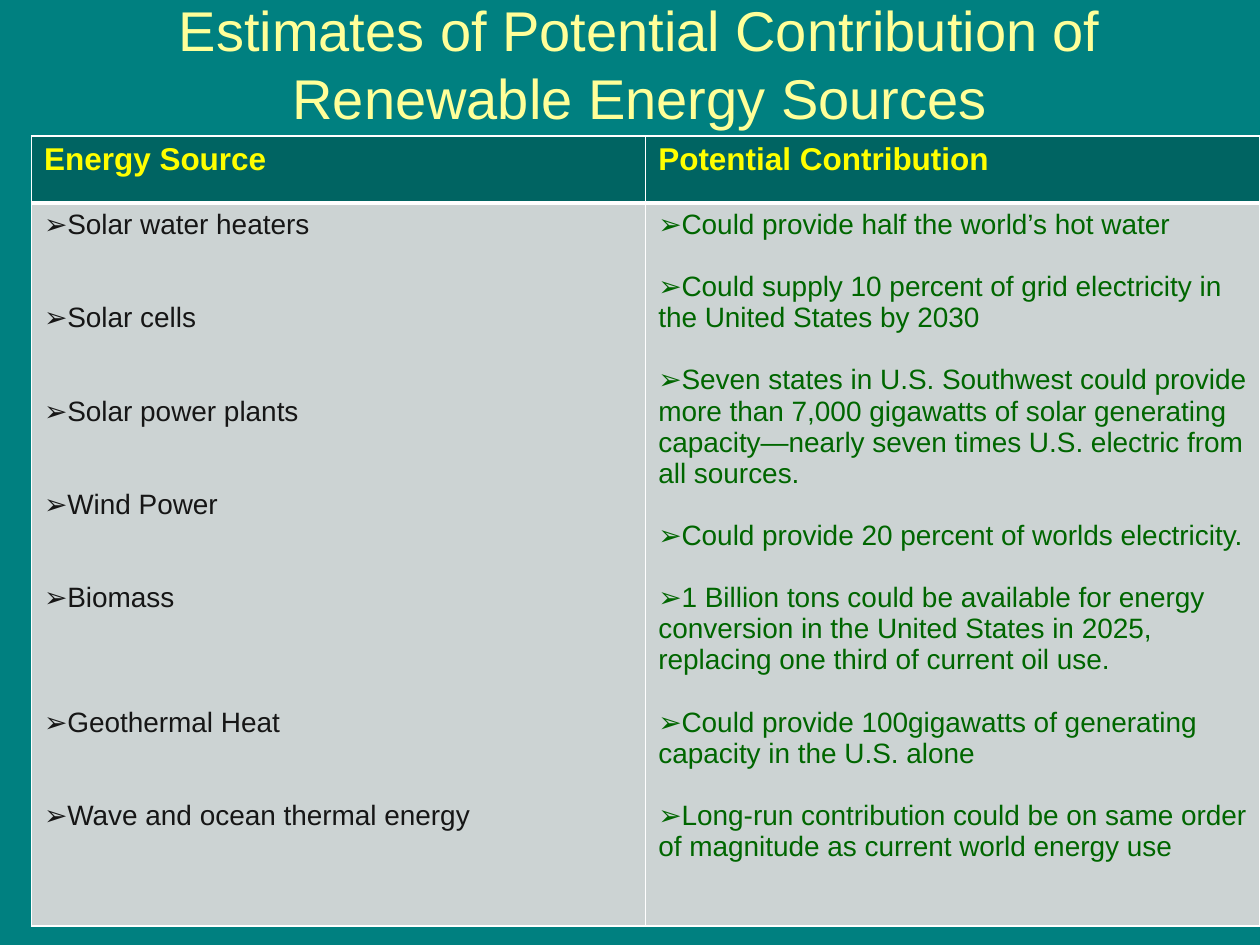
import dataclasses

import pptx
import pptx.dml.color
import pptx.enum.text
import pptx.oxml.ns
import pptx.util
from lxml import etree

Inches = pptx.util.Inches
Pt = pptx.util.Pt


@dataclasses.dataclass(frozen=True)
class Theme:
    font: str = "Arial"
    background: str = "008080"
    title: str = "FFFF99"
    header_fill: str = "006462"
    header_text: str = "FFFF00"
    body_fill: str = "CCD3D3"
    source_text: str = "161616"
    contribution_text: str = "006600"
    border: str = "FFFFFF"
    title_size: float = 32
    title_line: float = 38.8
    header_size: float = 18
    body_size: float = 16
    body_line: float = 17.8


THEME = Theme()
TITLE = "Estimates of Potential Contribution of Renewable Energy Sources"
HEADERS = ("Energy Source", "Potential Contribution")

# Each entry: text and the number of lines left free above it.
SOURCES = (
    ("Solar water heaters", 0),
    ("Solar cells", 2),
    ("Solar power plants", 2),
    ("Wind Power", 2),
    ("Biomass", 2),
    ("Geothermal Heat", 3),
    ("Wave and ocean thermal energy", 2),
)
CONTRIBUTIONS = (
    ("Could provide half the world’s hot water", 0),
    ("Could supply 10 percent of grid electricity in the United States by 2030", 1),
    ("Seven states in U.S. Southwest could provide more than 7,000 gigawatts of "
     "solar generating capacity—nearly seven times U.S. electric from all sources.", 1),
    ("Could provide 20 percent of worlds electricity.", 1),
    ("1 Billion tons could be available for energy conversion in the United States "
     "in 2025, replacing one third of current oil use.", 1),
    ("Could provide 100gigawatts of generating capacity in the U.S. alone", 1),
    ("Long-run contribution could be on same order of magnitude as current world "
     "energy use", 1),
)


def rgb(color):
    return pptx.dml.color.RGBColor.from_string(color)


def add_span(para, text, size, color, bold=False):
    span = para.add_run()
    span.text = text
    span.font.name = THEME.font
    span.font.size = Pt(size)
    span.font.bold = bold
    span.font.color.rgb = rgb(color)


def add_child(parent, tag, **attributes):
    return etree.SubElement(parent, pptx.oxml.ns.qn(tag), **attributes)


def set_bullet(para):
    """Put an arrow bullet directly before the text, with no hanging indent."""
    properties = para._p.get_or_add_pPr()
    properties.set("marL", "0")
    properties.set("indent", "0")
    add_child(properties, "a:buFont", typeface=THEME.font)
    add_child(properties, "a:buChar", char="➢")


def style_cell(cell, fill, top=1, bottom=1):
    """Fill the cell and draw its borders, widths in points."""
    properties = cell._tc.get_or_add_tcPr()
    for side, width in (("L", 1), ("R", 1), ("T", top), ("B", bottom)):
        line = add_child(properties, f"a:ln{side}", w=str(Pt(width)))
        solid = add_child(line, "a:solidFill")
        add_child(solid, "a:srgbClr", val=THEME.border)
    cell.fill.solid()
    cell.fill.fore_color.rgb = rgb(fill)


def fill_list(cell, entries, color):
    frame = cell.text_frame
    for index, (text, free_lines) in enumerate(entries):
        para = frame.paragraphs[0] if index == 0 else frame.add_paragraph()
        para.space_before = Pt(free_lines * THEME.body_line)
        set_bullet(para)
        add_span(para, text, THEME.body_size, color)


def place_title(page, left, top, width, height):
    box = page.shapes.title
    box.left, box.top, box.width, box.height = left, top, width, height
    frame = box.text_frame
    frame.word_wrap = True
    frame.auto_size = pptx.enum.text.MSO_AUTO_SIZE.NONE
    frame.vertical_anchor = pptx.enum.text.MSO_ANCHOR.MIDDLE
    para = frame.paragraphs[0]
    para.alignment = pptx.enum.text.PP_ALIGN.CENTER
    para.line_spacing = Pt(THEME.title_line)
    add_span(para, TITLE, THEME.title_size, THEME.title)


def place_energy_table(page, left, top, width, height):
    table = page.shapes.add_table(2, 2, left, top, width, height).table
    header_height = Inches(0.53)
    table.rows[0].height = header_height
    table.rows[1].height = height - header_height
    columns = ((SOURCES, THEME.source_text),
               (CONTRIBUTIONS, THEME.contribution_text))
    for index, (entries, color) in enumerate(columns):
        table.columns[index].width = width // 2
        header, body = table.cell(0, index), table.cell(1, index)
        style_cell(header, THEME.header_fill, bottom=3)
        style_cell(body, THEME.body_fill, top=3)
        add_span(header.text_frame.paragraphs[0], HEADERS[index],
                 THEME.header_size, THEME.header_text, bold=True)
        fill_list(body, entries, color)


def main():
    deck = pptx.Presentation()
    deck.slide_width, deck.slide_height = Inches(10), Inches(7.5)
    page = deck.slides.add_slide(deck.slide_layouts[5])
    page.background.fill.solid()
    page.background.fill.fore_color.rgb = rgb(THEME.background)
    place_title(page, Inches(0.58), Inches(0), Inches(9), Inches(1))
    place_energy_table(page, Inches(0.25), Inches(1.08), Inches(9.75), Inches(6.27))
    deck.save("out.pptx")


if __name__ == "__main__":
    main()
